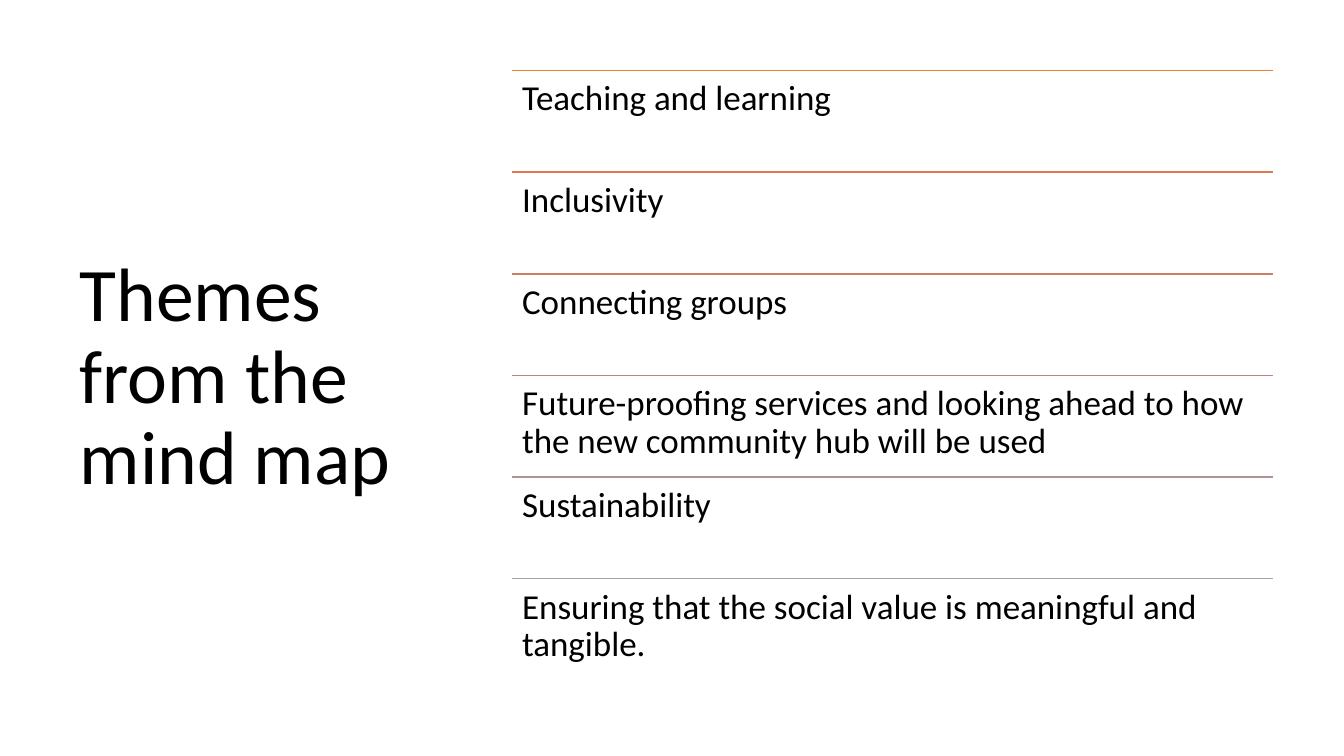
from dataclasses import dataclass

from lxml import etree
from pptx import Presentation
from pptx.dml.color import RGBColor
from pptx.enum.shapes import MSO_CONNECTOR
from pptx.enum.text import MSO_ANCHOR, PP_ALIGN
from pptx.oxml.ns import qn
from pptx.util import Inches, Pt

STRAIGHT = MSO_CONNECTOR.STRAIGHT
MIDDLE = MSO_ANCHOR.MIDDLE
TOP = MSO_ANCHOR.TOP
LEFT = PP_ALIGN.LEFT

TITLE = "Themes from the mind map"
THEMES = [
    ("Teaching and learning", "ED7D31"),
    ("Inclusivity", "DC7A4B"),
    ("Connecting groups", "CC7D64"),
    ("Future-proofing services and looking ahead to how the new community hub will be used", "BD867B"),
    ("Sustainability", "B09391"),
    ("Ensuring that the social value is meaningful and tangible.", "A5A5A5"),
]

LIST_LEFT, LIST_TOP, LIST_WIDTH, LIST_HEIGHT = 5.08, 0.7, 7.55, 6.05
ROW_HEIGHT = LIST_HEIGHT / len(THEMES)
INSET = Inches(0.1)


@dataclass(frozen=True)
class Theme:
    font: str = "Calibri"
    text: str = "000000"
    background: str = "FFFFFF"
    title_size: int = 54
    body_size: int = 25
    rule_width: int = 1
    line_spacing: float = 0.9


THEME = Theme()


def write_text(text_frame, text, size, anchor):
    text_frame.text = text
    text_frame.word_wrap = True
    text_frame.vertical_anchor = anchor
    paragraph = text_frame.paragraphs[0]
    paragraph.alignment = LEFT
    paragraph.line_spacing = THEME.line_spacing
    font = paragraph.runs[0].font
    font.name = THEME.font
    font.size = Pt(size)
    font.color.rgb = RGBColor.from_string(THEME.text)


def add_rule(shapes, top, color):
    rule = shapes.add_connector(
        STRAIGHT, Inches(LIST_LEFT), Inches(top), Inches(LIST_LEFT + LIST_WIDTH), Inches(top)
    )
    rule.line.color.rgb = RGBColor.from_string(color)
    rule.line.width = Pt(THEME.rule_width)
    etree.SubElement(rule.element.spPr, qn("a:effectLst"))


def add_theme_text(shapes, top, text):
    shape = shapes.add_textbox(Inches(LIST_LEFT), Inches(top), Inches(LIST_WIDTH), Inches(ROW_HEIGHT))
    text_frame = shape.text_frame
    text_frame.margin_left = text_frame.margin_right = INSET
    text_frame.margin_top = text_frame.margin_bottom = INSET
    write_text(text_frame, text, THEME.body_size, TOP)


def main():
    presentation = Presentation()
    presentation.slide_width = Inches(13.33)
    presentation.slide_height = Inches(7.5)
    slide = presentation.slides.add_slide(presentation.slide_layouts[5])
    slide.background.fill.solid()
    slide.background.fill.fore_color.rgb = RGBColor.from_string(THEME.background)

    title = slide.shapes.title
    title.left, title.top = Inches(0.69), Inches(0.7)
    title.width, title.height = Inches(3.74), Inches(6.11)
    write_text(title.text_frame, TITLE, THEME.title_size, MIDDLE)

    theme_list = slide.shapes.add_group_shape()
    for row, (text, color) in enumerate(THEMES):
        top = LIST_TOP + row * ROW_HEIGHT
        add_rule(theme_list.shapes, top, color)
        add_theme_text(theme_list.shapes, top, text)

    presentation.save("out.pptx")


if __name__ == "__main__":
    main()
